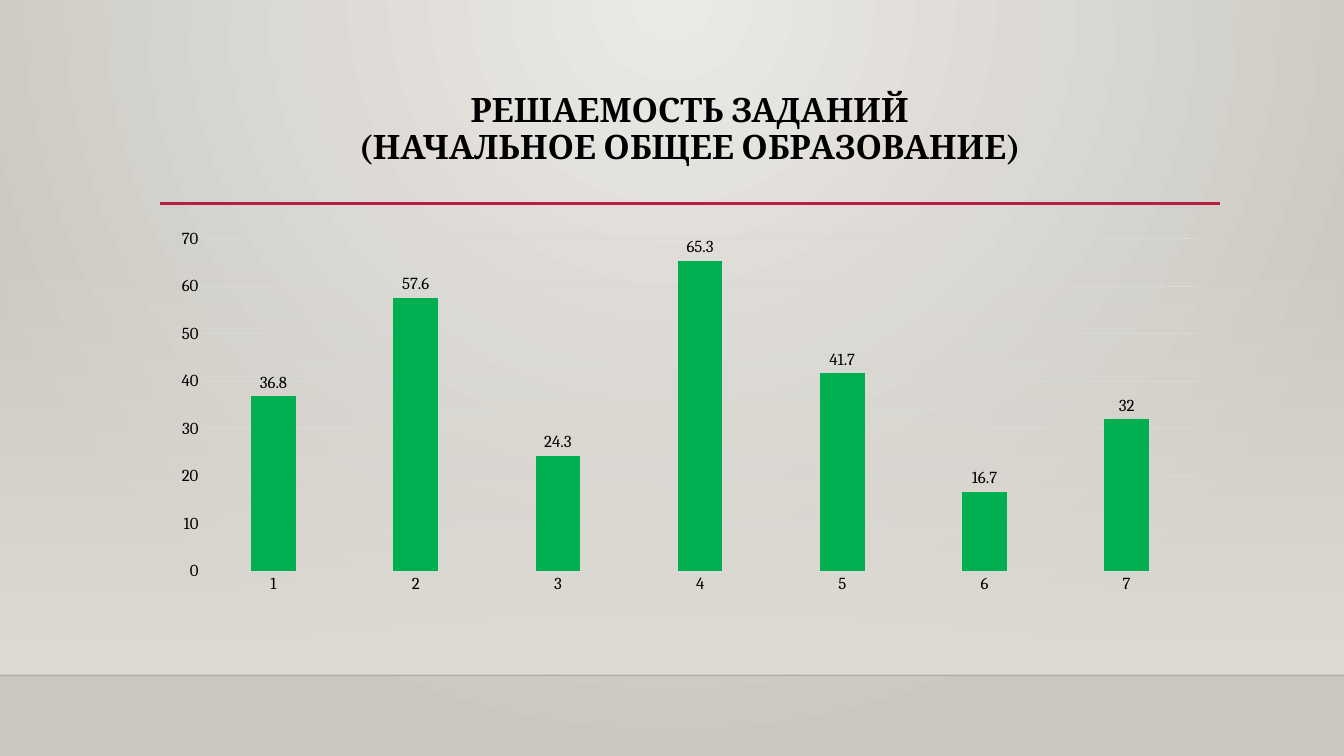
from copy import deepcopy
from lxml import etree
from pptx import Presentation, util as u
from pptx.chart.data import CategoryChartData
from pptx.dml.color import RGBColor
from pptx.enum import chart as ch, shapes, text
from pptx.oxml import parse_xml
from pptx.oxml.ns import nsdecls, qn

TITLE = ("РЕШАЕМОСТЬ ЗАДАНИЙ", "(НАЧАЛЬНОЕ ОБЩЕЕ ОБРАЗОВАНИЕ)")
SOLVED = {"1": 36.8, "2": 57.6, "3": 24.3, "4": 65.3, "5": 41.7, "6": 16.7, "7": 32}
FONT = "Cambria"
WIDE, HIGH = 13.33, 7.5
LEFT, SPAN = 1.59, 10.5
FLOOR = 6.7


def color(fmt, code):
    fmt.rgb = RGBColor.from_string(code)


def style(font, **values):
    color(font.color, "000000")
    for key, val in {"name": FONT, **values}.items():
        setattr(font, key, val)


def grad(stops, shade):
    """Gradient fill from (position, colour, opacity) stops, in percent."""
    marks = "".join(
        f'<a:gs pos="{pos * 1000}"><a:srgbClr val="{code}">'
        f'<a:alpha val="{alpha * 1000}"/></a:srgbClr></a:gs>'
        for pos, code, alpha in stops)
    return parse_xml(f'<a:gradFill {nsdecls("a")} rotWithShape="1">'
                     f'<a:gsLst>{marks}</a:gsLst>{shade}</a:gradFill>')


def refill(parent, fill):
    parent.replace(parent.find(qn("a:solidFill")), fill)


def rule(left, right, top, code, width):
    line = slide.shapes.add_connector(
        shapes.MSO_CONNECTOR.STRAIGHT, *map(u.Inches, (left, top, right, top)))
    color(line.line.color, code)
    line.line.width = u.Pt(width)
    etree.SubElement(line._element.spPr, qn("a:effectLst"))
    return line


deck = Presentation()
deck.slide_width, deck.slide_height = u.Inches(WIDE), u.Inches(HIGH)
slide = deck.slides.add_slide(deck.slide_layouts[5])

# Backdrop
slide.background.fill.solid()
refill(slide.element.find(".//" + qn("p:bgPr")), grad(
    [(0, "ECEAE7", 100), (100, "CAC7C1", 100)],
    '<a:path path="circle"><a:fillToRect l="43000" r="43000" b="100000"/></a:path>'))
wall = slide.shapes.add_shape(
    shapes.MSO_SHAPE.RECTANGLE, *map(u.Inches, (0, 2.21, WIDE, FLOOR - 2.21)))
wall.shadow.inherit = False
wall.line.fill.background()
wall.fill.solid()
refill(wall._element.spPr, grad(
    [(0, "DFDBD5", 0), (100, "DFDBD5", 100)], '<a:lin ang="5400000" scaled="0"/>'))

edge = rule(0, WIDE, FLOOR, "000001", 1)
tint = edge._element.spPr.find(".//" + qn("a:srgbClr"))
etree.SubElement(tint, qn("a:alpha"), val="20000")
rule(LEFT, 12.1, 2.02, "B71E42", 2.5)

# Title
title = slide.shapes.title
title.left, title.top, title.width, title.height = map(u.Inches, (LEFT, 0.88, SPAN, 0.98))
frame = title.text_frame
frame.text = "\v".join(TITLE)
frame.word_wrap = True
frame.auto_size = text.MSO_AUTO_SIZE.NONE
frame.vertical_anchor = text.MSO_ANCHOR.TOP
para = frame.paragraphs[0]
para.alignment, para.line_spacing = text.PP_ALIGN.CENTER, 0.9
for run in para.runs:
    style(run.font, size=u.Pt(24), bold=True)
para._p.find(qn("a:br")).append(deepcopy(para.runs[0]._r.rPr))

# Chart
data = CategoryChartData()
data.categories = list(SOLVED)
data.add_series("Series 1", list(SOLVED.values()))
chart = slide.shapes.add_chart(
    ch.XL_CHART_TYPE.COLUMN_CLUSTERED,
    *map(u.Inches, (LEFT, 2.2, SPAN, 3.77)), data).chart
chart.has_legend = chart.has_title = False
style(chart.font, size=u.Pt(12))

plot = chart.plots[0]
plot.vary_by_categories = False
plot.gap_width, plot.overlap = 219, -27
bars = plot.series[0]
bars.format.fill.solid()
color(bars.format.fill.fore_color, "00B050")
tags = bars.data_labels
tags.show_value = True
tags.position = ch.XL_LABEL_POSITION.OUTSIDE_END
style(tags.font, size=u.Pt(12))

cat, val = chart.category_axis, chart.value_axis
for axis in (cat, val):
    axis.major_tick_mark = axis.minor_tick_mark = ch.XL_TICK_MARK.NONE
    style(axis.tick_labels.font, size=u.Pt(12))
val.minimum_scale, val.maximum_scale, val.major_unit = 0, 70, 10
val.format.line.fill.background()
for line in (cat.format.line, val.major_gridlines.format.line):
    color(line.color, "D9D9D9")
    line.width = u.Pt(0.75)

deck.save("out.pptx")
